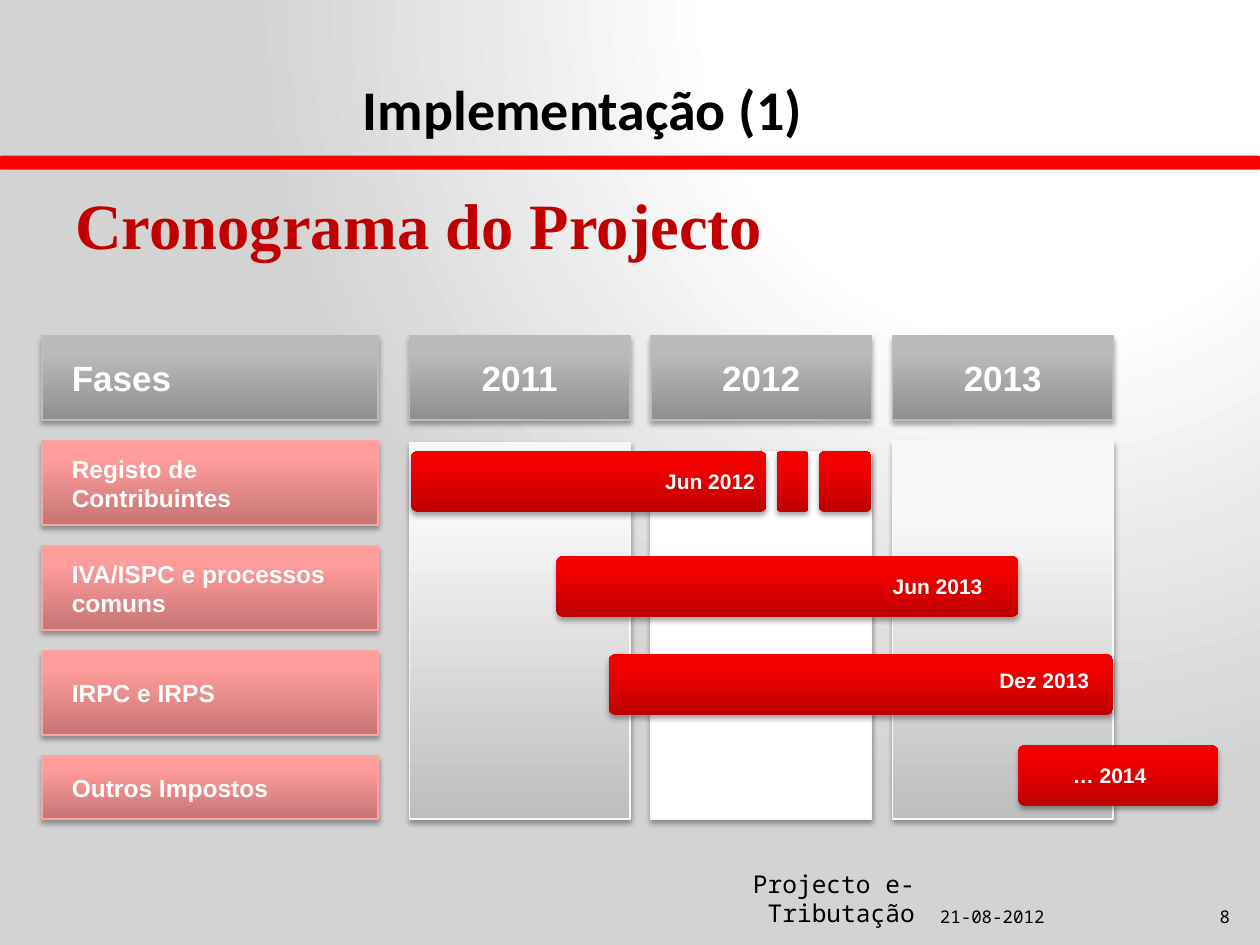
import pptx
import pptx.dml.color
import pptx.enum.shapes
import pptx.enum.text
import pptx.oxml
import pptx.oxml.ns
import pptx.util

Pt = pptx.util.Pt
SHAPE = pptx.enum.shapes.MSO_SHAPE
ALIGN = pptx.enum.text.PP_ALIGN
ANCHOR = pptx.enum.text.MSO_ANCHOR
COLORS = {"black": "000000", "white": "FFFFFF", "red": "FF0000", "heading": "C00000",
          "header_edge": "BCBCBC", "phase_edge": "FAA4A4", "column_edge": "F9F9F9"}
GRADIENTS = {
    "background": [(0, "FFFFFF"), (40, "FFFFFF"), (100, "D3D3D3")],
    "header": [(0, "8F8F8F"), (80, "BABABA"), (100, "BBBBBB")],
    "phase": [(0, "C77575"), (80, "FF9C9C"), (100, "FF9E9E")],
    "column": [(0, "BEBEBE"), (80, "F7F7F7"), (100, "F8F8F8")],
    "bar": [(0, "BD0000"), (80, "F50000"), (100, "F60000")],
}
UPWARD = '<a:lin ang="16200000" scaled="0"/>'
RADIAL = '<a:path path="circle"><a:fillToRect l="65000" t="0" r="0" b="98000"/></a:path>'


class TimelineSlide:
    """Holds the timeline style and draws its elements on one slide."""

    def __init__(self, deck):
        self.slide = deck.slides.add_slide(deck.slide_layouts[6])

    def color(self, name):
        return pptx.dml.color.RGBColor.from_string(COLORS[name])

    def xml(self, tag, body, attributes=""):
        namespace = pptx.oxml.ns.nsdecls("a")
        return pptx.oxml.parse_xml(f"<a:{tag} {namespace} {attributes}>{body}</a:{tag}>")

    def gradient(self, fill, owner, name, direction=UPWARD):
        fill.gradient()
        stops = "".join(f'<a:gs pos="{place * 1000}"><a:srgbClr val="{tint}"/></a:gs>'
                        for place, tint in GRADIENTS[name])
        current = owner.find(".//" + pptx.oxml.ns.qn("a:gradFill"))
        current.getparent().replace(
            current, self.xml("gradFill", f"<a:gsLst>{stops}</a:gsLst>{direction}", 'rotWithShape="1"'))

    def background(self):
        self.gradient(self.slide.background.fill, self.slide.element, "background", RADIAL)

    def shadow(self, shape):
        shape.element.spPr.append(self.xml("effectLst", (
            f'<a:outerShdw blurRad="{Pt(3.1)}" dist="{Pt(1.8)}" dir="5400000" rotWithShape="0">'
            f'<a:srgbClr val="{COLORS["black"]}"><a:alpha val="35000"/></a:srgbClr></a:outerShdw>')))

    def add_words(self, frame, text, size, font, color, align=ALIGN.LEFT, bold=True):
        paragraph = frame.paragraphs[0]
        paragraph.alignment = align
        run = paragraph.add_run()
        run.text = text
        run.font.size, run.font.name, run.font.bold = Pt(size), font, bold
        run.font.color.rgb = self.color(color)

    def rule(self, left, top, width, height):
        rule = self.slide.shapes.add_shape(SHAPE.CAN, Pt(left), Pt(top), Pt(width), Pt(height))
        rule.rotation = 90
        rule.shadow.inherit = False
        rule.fill.solid()
        rule.fill.fore_color.rgb = self.color("red")
        rule.line.color.rgb = self.color("red")
        rule.line.width = Pt(2)

    def panel(self, left, top, width, height, fill, edge=None, kind=SHAPE.RECTANGLE):
        panel = self.slide.shapes.add_shape(kind, Pt(left), Pt(top), Pt(width), Pt(height))
        if fill in GRADIENTS:
            self.gradient(panel.fill, panel.element, fill)
        else:
            panel.fill.solid()
            panel.fill.fore_color.rgb = self.color(fill)
        if edge:
            panel.line.color.rgb = self.color(edge)
            panel.line.width = Pt(0.75)
        else:
            panel.line.fill.background()
        self.shadow(panel)
        return panel

    def card(self, left, top, width, height, style, text, size, align=ALIGN.LEFT):
        frame = self.panel(left, top, width, height, style, style + "_edge").text_frame
        frame.word_wrap = True
        frame.vertical_anchor = ANCHOR.MIDDLE
        frame.margin_left = frame.margin_right = Pt(17)
        frame.margin_top = frame.margin_bottom = Pt(17)
        self.add_words(frame, text, size, "Arial", "white", align)

    def bar(self, left, top, width):
        bar = self.panel(left, top, width, 34.5, "bar", kind=SHAPE.ROUNDED_RECTANGLE)
        bar.adjustments[0] = 0.1

    def label(self, left, top, width, height, text, size, font, color="black",
              align=ALIGN.LEFT, bold=True, wrap=True, anchor=ANCHOR.TOP):
        box = self.slide.shapes.add_textbox(Pt(left), Pt(top), Pt(width), Pt(height))
        box.text_frame.word_wrap = wrap
        box.text_frame.vertical_anchor = anchor
        self.add_words(box.text_frame, text, size, font, color, align, bold)


def main():
    deck = pptx.Presentation()
    deck.slide_width, deck.slide_height = Pt(720), Pt(540)
    timeline = TimelineSlide(deck)
    timeline.background()
    timeline.rule(357, -267, 6, 720)

    footers = [(530, 151, "21-08-2012", 10, ALIGN.LEFT),
               (345, 185, "Projecto e-Tributação", 14, ALIGN.RIGHT),
               (681, 29, "8", 10, ALIGN.RIGHT)]
    for left, width, text, size, align in footers:
        timeline.label(left, 505, width, 28.5, text, size, "Noto Sans Mono",
                       align=align, bold=False, anchor=ANCHOR.BOTTOM)

    phase_left, phase_width, row_height, row_step, header_top = 24, 192, 48, 60, 192
    timeline.card(phase_left, header_top, phase_width, row_height, "header", "Fases", 20)
    phases = ["Registo de Contribuintes", "IVA/ISPC e processos comuns", "IRPC e IRPS", "Outros Impostos"]
    for row, phase in enumerate(phases, 1):
        height = 36 if row == len(phases) else row_height
        timeline.card(phase_left, header_top + row * row_step, phase_width, height, "phase", phase, 14)

    columns_bottom = 468
    years = [("2011", 253, "column"), ("2012", 258, "white"), ("2013", 252, "column")]
    for index, (year, top, fill) in enumerate(years):
        left = 234 + index * 138
        timeline.card(left, header_top, 126, row_height, "header", year, 20, ALIGN.CENTER)
        timeline.panel(left, top, 126, columns_bottom - top, fill, "column_edge")

    for left, top, width in [(235, 258, 203), (444, 258, 18), (468, 258, 30),
                             (318, 318, 264), (348, 374, 288), (582, 426, 114)]:
        timeline.bar(left, top, width)
    for left, top, width, deadline in [(373, 264, 66, "Jun 2012"), (503, 324, 66, "Jun 2013"),
                                       (564, 378, 66, "Dez 2013"), (606, 432, 57, "… 2014")]:
        timeline.label(left, top, width, 21.6, deadline, 12, "Arial", "white", wrap=False)

    timeline.label(36, 102, 648, 48, "Cronograma do Projecto", 36.9, "Times New Roman", "heading")
    timeline.label(138, 39, 390, 46, "Implementação (1)", 32, "Calibri", align=ALIGN.CENTER)
    deck.save("out.pptx")


if __name__ == "__main__":
    main()
